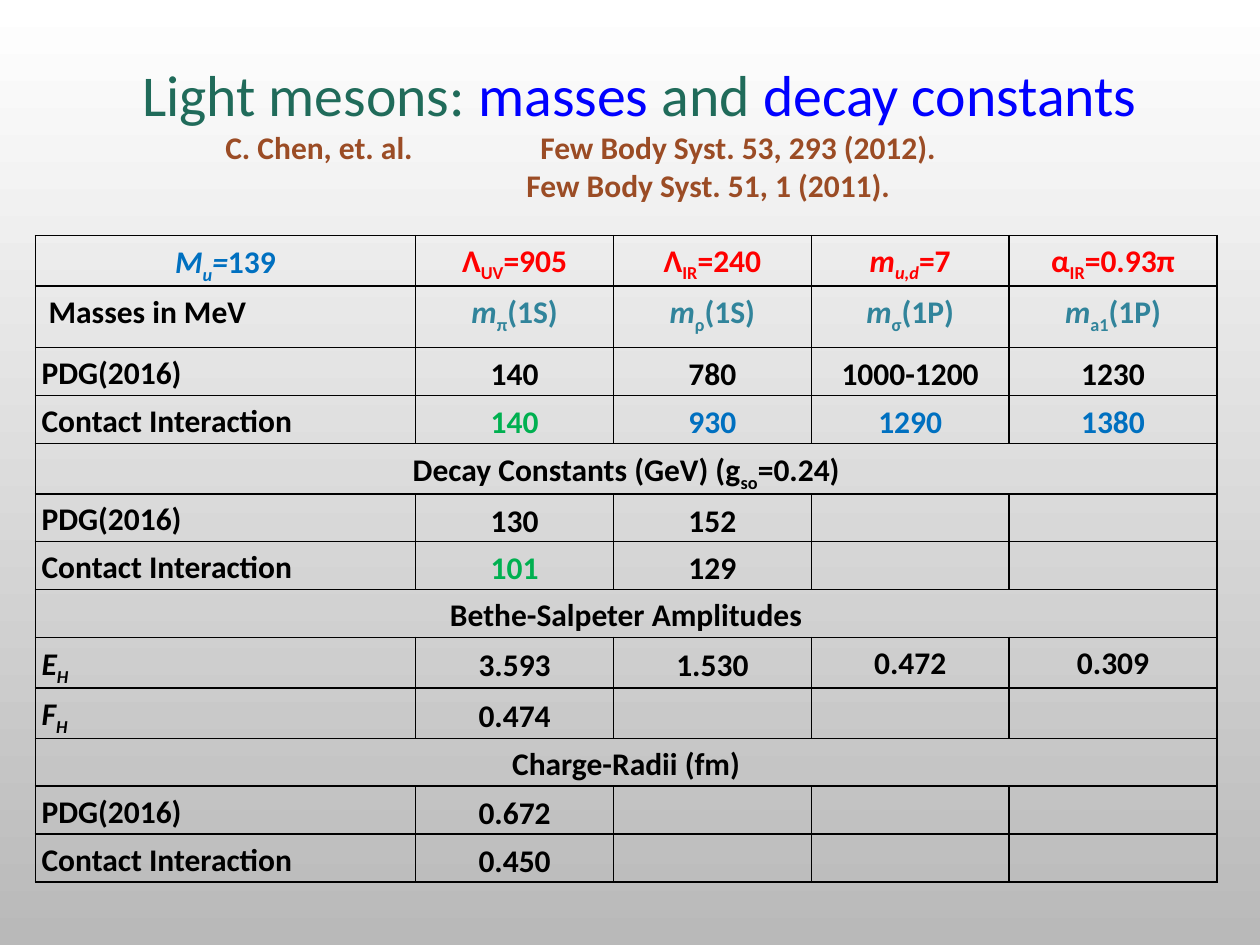
from lxml import etree
from pptx import Presentation
from pptx.dml.color import RGBColor
from pptx.enum import text as tx
from pptx.oxml.ns import qn
from pptx.util import Inches, Pt

FONT = "Calibri"
WHITE = RGBColor(0xFF, 0xFF, 0xFF)
GREY = RGBColor(0xB9, 0xB9, 0xB9)
BLACK = RGBColor(0, 0, 0)
PINE = RGBColor(0x20, 0x6B, 0x5A)
VIVID = RGBColor(0, 0, 0xFF)
BROWN = RGBColor(0x9B, 0x4C, 0x25)
RED = RGBColor(0xFF, 0, 0)
BLUE = RGBColor(0, 0x70, 0xC0)
TEAL = RGBColor(0x31, 0x84, 0x9B)
GREEN = RGBColor(0, 0xB0, 0x50)

COLS = [3.02, 1.57, 1.57, 1.57, 1.65]
ROWS = [0.39, 0.49] + [0.38] * 11


def entry(color, *runs):
    """One cell: a colour and its (text, marks); i is italic, s is subscript."""
    return color, [(run, "") if isinstance(run, str) else run for run in runs]


def meson(sub, state):
    return entry(TEAL, ("m", "i"), (sub, "s"), state)


def limit(sign, sub, value, mark=""):
    return entry(RED, (sign, mark), (sub, "s" + mark), value)


def plain(label, *values):
    return [v if isinstance(v, tuple) else entry(BLACK, v) for v in (label, *values)]


def amp(sign):
    return entry(BLACK, (sign, "i"), ("H", "is"))


PDG, CONTACT = "PDG(2016)", "Contact Interaction"
# A row with a single entry spans the whole table
DATA = [
    [entry(BLUE, ("M", "i"), ("u", "is"), ("=", "i"), "139"),
     limit("Λ", "UV", "=905"), limit("Λ", "IR", "=240"),
     limit("m", "u,d", "=7", "i"), limit("α", "IR", "=0.93π")],
    plain(" Masses in MeV", meson("π", "(1S)"), meson("ρ", "(1S)"),
          meson("σ", "(1P)"), meson("a1", "(1P)")),
    plain(PDG, "140", "780", "1000-1200", "1230"),
    plain(CONTACT, entry(GREEN, "140"),
          *[entry(BLUE, v) for v in ("930", "1290", "1380")]),
    [entry(BLACK, "Decay Constants (GeV) (g", ("so", "s"), "=0.24)")],
    plain(PDG, "130", "152"),
    plain(CONTACT, entry(GREEN, "101"), "129"),
    plain("Bethe-Salpeter Amplitudes"),
    plain(amp("E"), "3.593", "1.530", "0.472", "0.309"),
    plain(amp("F"), "0.474"),
    plain("Charge-Radii (fm)"),
    plain(PDG, "0.672"),
    plain(CONTACT, "0.450"),
]


def add_run(par, words, size, color, bold=False, marks=""):
    run = par.add_run()
    run.text = words
    font = run.font
    font.name, font.size, font.bold = FONT, Pt(size), bold
    font.italic = "i" in marks
    font.color.rgb = color
    if "s" in marks:
        run._r.get_or_add_rPr().set("baseline", "-25000")


def set_back(slide):
    fill = slide.background.fill
    fill.gradient()
    fill.gradient_angle = 270
    for stop, color in zip(fill.gradient_stops, (WHITE, GREY)):
        stop.color.rgb = color


def add_title(slide, left, top, width, height):
    title = slide.shapes.title
    title.left, title.top = Inches(left), Inches(top)
    title.width, title.height = Inches(width), Inches(height)
    frame = title.text_frame
    frame.auto_size = tx.MSO_AUTO_SIZE.NONE
    frame.vertical_anchor = tx.MSO_ANCHOR.BOTTOM
    par = frame.paragraphs[0]
    par.alignment = tx.PP_ALIGN.CENTER
    for words, color in (("Light mesons: ", PINE), ("masses", VIVID),
                         (" and ", PINE), ("decay constants", VIVID)):
        add_run(par, words, 33, color)


def add_refs(slide, left, top, width, height):
    box = slide.shapes.add_textbox(Inches(left), Inches(top), Inches(width), Inches(height))
    frame = box.text_frame
    frame.word_wrap = True
    lines = [("C. Chen, et. al.\tFew Body Syst. 53, 293 (2012).", 2.5),
             ("\tFew Body Syst. 51, 1 (2011).", 2.39)]
    for i, (words, stop) in enumerate(lines):
        par = frame.add_paragraph() if i else frame.paragraphs[0]
        tabs = etree.SubElement(par._p.get_or_add_pPr(), qn("a:tabLst"))
        etree.SubElement(tabs, qn("a:tab"), pos=str(Inches(stop)), algn="l")
        add_run(par, words, 18, BROWN, True)


def set_grid(cell):
    """Clear the fill and draw all four borders, which precede the fill."""
    cell.fill.background()
    props = cell._tc.get_or_add_tcPr()
    for i, side in enumerate(("lnL", "lnR", "lnT", "lnB")):
        line = etree.Element(qn("a:" + side), w=str(Pt(1)))
        fill = etree.SubElement(line, qn("a:solidFill"))
        etree.SubElement(fill, qn("a:srgbClr"), val=str(BLACK))
        props.insert(i, line)


def fill_cell(cell, item, center, after):
    color, runs = item
    par = cell.text_frame.paragraphs[0]
    par.alignment = tx.PP_ALIGN.CENTER if center else tx.PP_ALIGN.LEFT
    par.line_spacing = 1.15
    par.space_after = Pt(after)
    for words, marks in runs:
        add_run(par, words, 18, color, True, marks)


def add_grid(slide, left, top, width, height):
    table = slide.shapes.add_table(len(ROWS), len(COLS), Inches(left), Inches(top),
                                   Inches(width), Inches(height)).table
    table.first_row = table.horz_banding = False
    for col, size in zip(table.columns, COLS):
        col.width = Inches(size)
    for row, size in zip(table.rows, ROWS):
        row.height = Inches(size)
    for r, items in enumerate(DATA):
        for c in range(len(COLS)):
            cell = table.cell(r, c)
            bare = r == 0 and c > 0
            cell.margin_left = cell.margin_right = Inches(0 if bare else 0.05)
            cell.margin_top = Inches(0 if bare else 0.01)
            cell.margin_bottom = 0
            set_grid(cell)
            if c < len(items):
                center = c > 0 or r == 0 or len(items) == 1
                fill_cell(cell, items[c], center, 0 if c == 0 and r in (2, 3) else 10)
            # Values sit mid-cell, but the last two amplitudes stay at the top
            if r > 1 and 0 < c < len(items) and not (r == 8 and c > 2):
                cell.vertical_anchor = tx.MSO_ANCHOR.MIDDLE
        if len(items) == 1:
            table.cell(r, 0).merge(table.cell(r, len(COLS) - 1))


def main():
    deck = Presentation()
    deck.slide_width, deck.slide_height = Inches(10), Inches(7.5)
    slide = deck.slides.add_slide(deck.slide_layouts[5])
    set_back(slide)
    add_grid(slide, 0.28, 1.87, sum(COLS), sum(ROWS))
    add_refs(slide, 1.69, 0.97, 8.3, 0.7)
    add_title(slide, 0.41, 0.24, 9.33, 0.83)
    deck.save("out.pptx")


if __name__ == "__main__":
    main()
